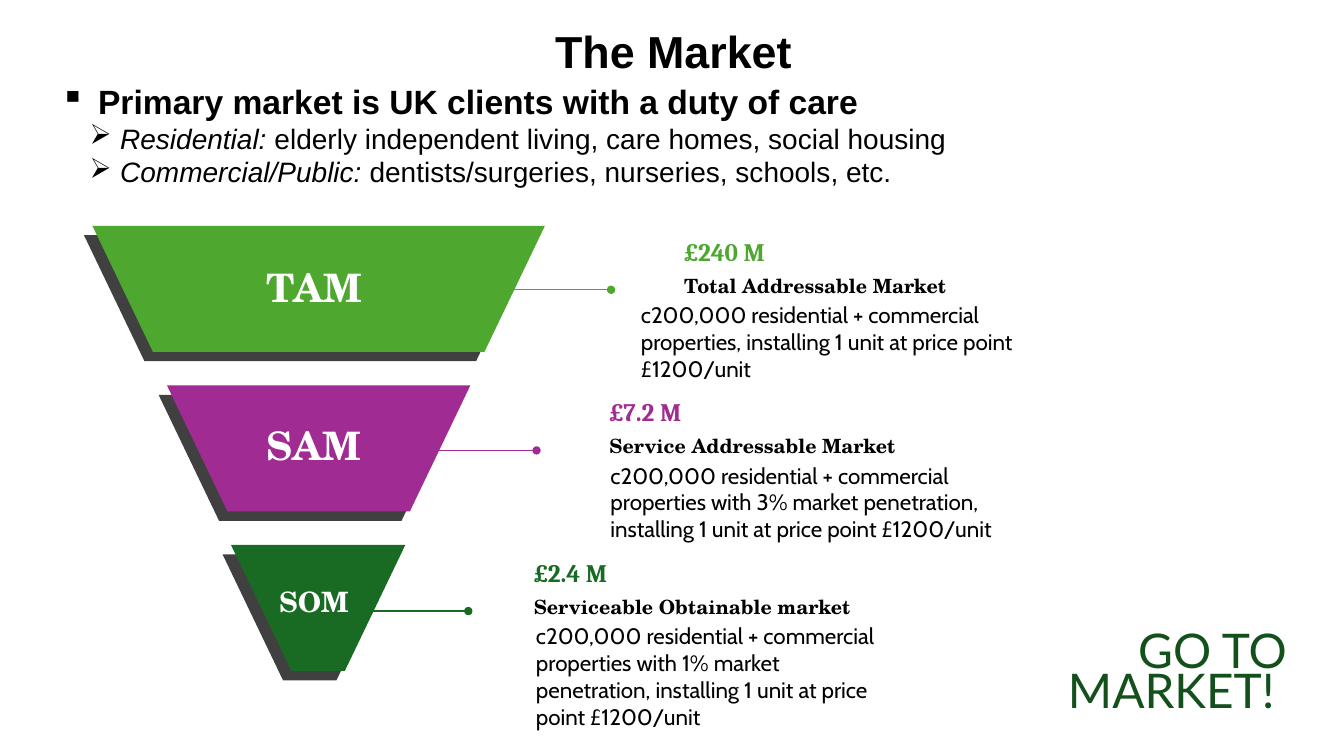
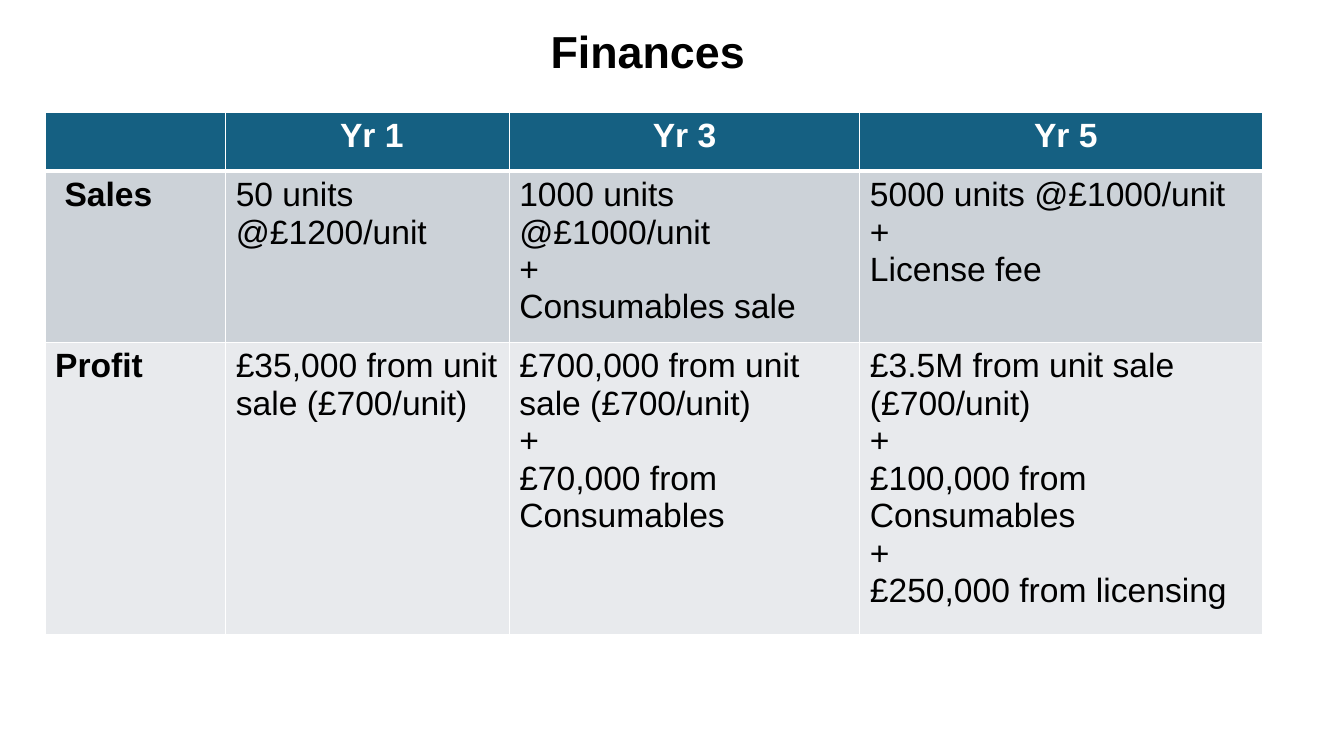
from dataclasses import dataclass

from lxml import etree
from pptx import Presentation, util as u
from pptx.dml import color
from pptx.enum import shapes, text
from pptx.oxml import ns

PX = 9525
WHITE, BLACK, CHARCOAL = "FFFFFF", "000000", "404040"
HEADER_FILL, ROW_FILLS = "156082", ("CCD2D8", "E8EAED")
CENTER, RIGHT = text.PP_ALIGN.CENTER, text.PP_ALIGN.RIGHT

BODY = {"name": "Arial", "size": u.Pt(24)}
STRONG = {**BODY, "bold": True}
TITLE = {**STRONG, "size": u.Pt(32)}
DETAIL = {**BODY, "size": u.Pt(20)}
AMOUNT = {"name": "Cambria", "size": u.Pt(18), "bold": True}
SERIF = {"name": "TeX Gyre Schola", "size": u.Pt(14), "bold": True}
NOTE = {"name": "Cabin", "size": u.Pt(16)}
SLOGAN = {"name": "Lato", "size": u.Pt(34.1)}


def px(length):
    return u.Emu(int(length * PX))


def rgb(value):
    return color.RGBColor.from_string(value)


def apply(target, values):
    for name, value in values.items():
        setattr(target, name, value)


def child(parent, tag, **attributes):
    return etree.SubElement(parent, ns.qn(tag), attributes)


@dataclass
class Tier:
    label: str
    label_size: int
    label_y: int
    width: int
    tint: str
    line_x: int
    heading_x: int
    note_x: int
    note_width: int
    amount: str
    heading: str
    note: str


class Deck:
    def __init__(self):
        self.show = Presentation()
        apply(self.show, {"slide_width": px(1280), "slide_height": px(720)})
        self.slide = None

    def new_slide(self):
        self.slide = self.show.slides.add_slide(self.show.slide_layouts[6])

    def add_text(self, paragraph, content, font, tint=BLACK, **layout):
        apply(paragraph, layout)
        run = paragraph.add_run()
        run.text = content
        apply(run.font, font)
        run.font.color.rgb = rgb(tint)

    def label(self, box, content, font, tint=BLACK, **layout):
        frame = self.slide.shapes.add_textbox(*map(px, box)).text_frame
        frame.word_wrap = True
        self.add_text(frame.paragraphs[0], content, font, tint, **layout)
        return frame

    def title(self, box, content):
        return self.label(box, content, TITLE, alignment=CENTER, line_spacing=0.9)

    def bullet(self, frame, mark, indent, hang, gap, parts):
        paragraph = frame.add_paragraph()
        apply(paragraph, {"line_spacing": 0.8, "space_before": u.Pt(gap)})
        for content, font in parts:
            self.add_text(paragraph, content, font)
        properties = paragraph._p.get_or_add_pPr()
        properties.set("marL", str(px(indent)))
        properties.set("indent", str(px(-hang)))
        child(properties, "a:buChar", char=mark)

    def funnel_band(self, x, y, width, height, tint):
        band = self.slide.shapes.add_shape(
            shapes.MSO_SHAPE.TRAPEZOID, *map(px, (x, y, width, height)))
        band.rotation = 180
        band.adjustments[0] = 0.48
        band.shadow.inherit = False
        band.fill.solid()
        band.fill.fore_color.rgb = rgb(tint)
        band.line.fill.background()

    def pointer(self, x, y, length, tint):
        pointer = self.slide.shapes.add_connector(
            shapes.MSO_CONNECTOR.STRAIGHT, *map(px, (x, y, x + length, y)))
        pointer.line.width = u.Pt(1)
        pointer.line.color.rgb = rgb(tint)
        child(pointer.line._get_or_add_ln(), "a:tailEnd", type="oval")
        child(pointer._element.spPr, "a:effectLst")

    def cell(self, cell, lines, font, tint, fill, bottom, **layout):
        properties = cell._tc.get_or_add_tcPr()
        for side, points in (("L", 1), ("R", 1), ("T", 1), ("B", bottom)):
            edge = child(properties, f"a:ln{side}", w=str(u.Pt(points)))
            child(child(edge, "a:solidFill"), "a:srgbClr", val=WHITE)
        cell.fill.solid()
        cell.fill.fore_color.rgb = rgb(fill)
        frame = cell.text_frame
        for index, line in enumerate(lines):
            paragraph = frame.add_paragraph() if index else frame.paragraphs[0]
            self.add_text(paragraph, line, font, tint, **layout)

    def table(self, x, y, widths, heights, rows):
        grid = self.slide.shapes.add_table(
            len(heights), len(widths), *map(px, (x, y, sum(widths), sum(heights)))).table
        for column, width in zip(grid.columns, widths):
            column.width = px(width)
        for row, height in zip(grid.rows, heights):
            row.height = px(height)
        for r, row in enumerate(rows):
            for c, lines in enumerate(row):
                if r == 0:
                    self.cell(grid.cell(r, c), lines, STRONG, WHITE, HEADER_FILL, 3,
                              alignment=CENTER)
                else:
                    font = BODY if c else STRONG
                    self.cell(grid.cell(r, c), lines, {"bold": False, **font}, BLACK,
                              ROW_FILLS[r - 1], 1)


TIERS = [
    Tier("TAM", 28, 246, 431, "4EA72E", 487, 642, 601, 406,
         "£240 M", "Total Addressable Market",
         "c200,000 residential + commercial properties, "
         "installing 1 unit at price point £1200/unit"),
    Tier("SAM", 28, 397, 289, "A02B93", 416, 571, 572, 406,
         "£7.2 M", "Service Addressable Market",
         "c200,000 residential + commercial properties with 3% market penetration, "
         "installing 1 unit at price point £1200/unit"),
    Tier("SOM", 20, 552, 166, "196B24", 351, 499, 501, 363,
         "£2.4 M", "Serviceable Obtainable market",
         "c200,000 residential + commercial properties with 1% market penetration, "
         "installing 1 unit at price point £1200/unit"),
]

FINANCES = [
    [[], [" Yr 1"], ["Yr 3"], [" Yr 5"]],
    [[" Sales"],
     ["50 units @£1200/unit"],
     ["1000 units @£1000/unit", "+", "Consumables sale"],
     ["5000 units @£1000/unit", "+", "License fee"]],
    [["Profit"],
     ["£35,000 from unit sale (£700/unit)"],
     ["£700,000 from unit sale (£700/unit)", "+", "£70,000 from Consumables"],
     ["£3.5M from unit sale (£700/unit)", "+", "£100,000 from Consumables", "+",
      "£250,000 from licensing"]],
]


def market(deck):
    deck.new_slide()
    intro = deck.title((48, 24, 1187, 166), "The Market")
    deck.bullet(intro, "▪", 36, 36, 7,
                [("Primary market is UK clients with a duty of care", STRONG)])
    for sector, clients in (
            ("Residential: ", "elderly independent living, care homes, social housing"),
            ("Commercial/Public:", " dentists/surgeries, nurseries, schools, etc.")):
        deck.bullet(intro, "➢", 57, 29, 5,
                    [(sector, {**DETAIL, "italic": True}), (clients, DETAIL)])

    funnel_center, funnel_top, band_step, band_height = 303, 215, 152, 120
    for shift_x, shift_y, shade in ((-8, 9, CHARCOAL), (0, 0, None)):
        for index, tier in enumerate(TIERS):
            deck.funnel_band(funnel_center - tier.width // 2 + shift_x,
                             funnel_top + index * band_step + shift_y,
                             tier.width, band_height, shade or tier.tint)

    for index, tier in enumerate(TIERS):
        top = 220 + index * 153
        deck.label((tier.note_x, top + 62, tier.note_width, 87), tier.note, NOTE)
        deck.label((tier.heading_x, top + 36, 364, 31), tier.heading, SERIF)
        deck.label((tier.heading_x, top, 364, 38), tier.amount, AMOUNT, tier.tint)
        deck.pointer(tier.line_x, top + 56, 95, tier.tint)
        deck.label((241, tier.label_y, 116, 52), tier.label,
                   {**SERIF, "size": u.Pt(tier.label_size)}, WHITE, alignment=CENTER)

    deck.label((920, 601, 315, 92), "GO TO MARKET! ", SLOGAN, "13501B",
               alignment=RIGHT, line_spacing=0.7, space_before=u.Pt(10))


def finances(deck):
    deck.new_slide()
    deck.title((143, 24, 960, 312), "Finances ")
    deck.table(43, 107, (172, 270, 334, 384), (56, 152, 259), FINANCES)


def main():
    deck = Deck()
    market(deck)
    finances(deck)
    deck.show.save("out.pptx")


if __name__ == "__main__":
    main()
